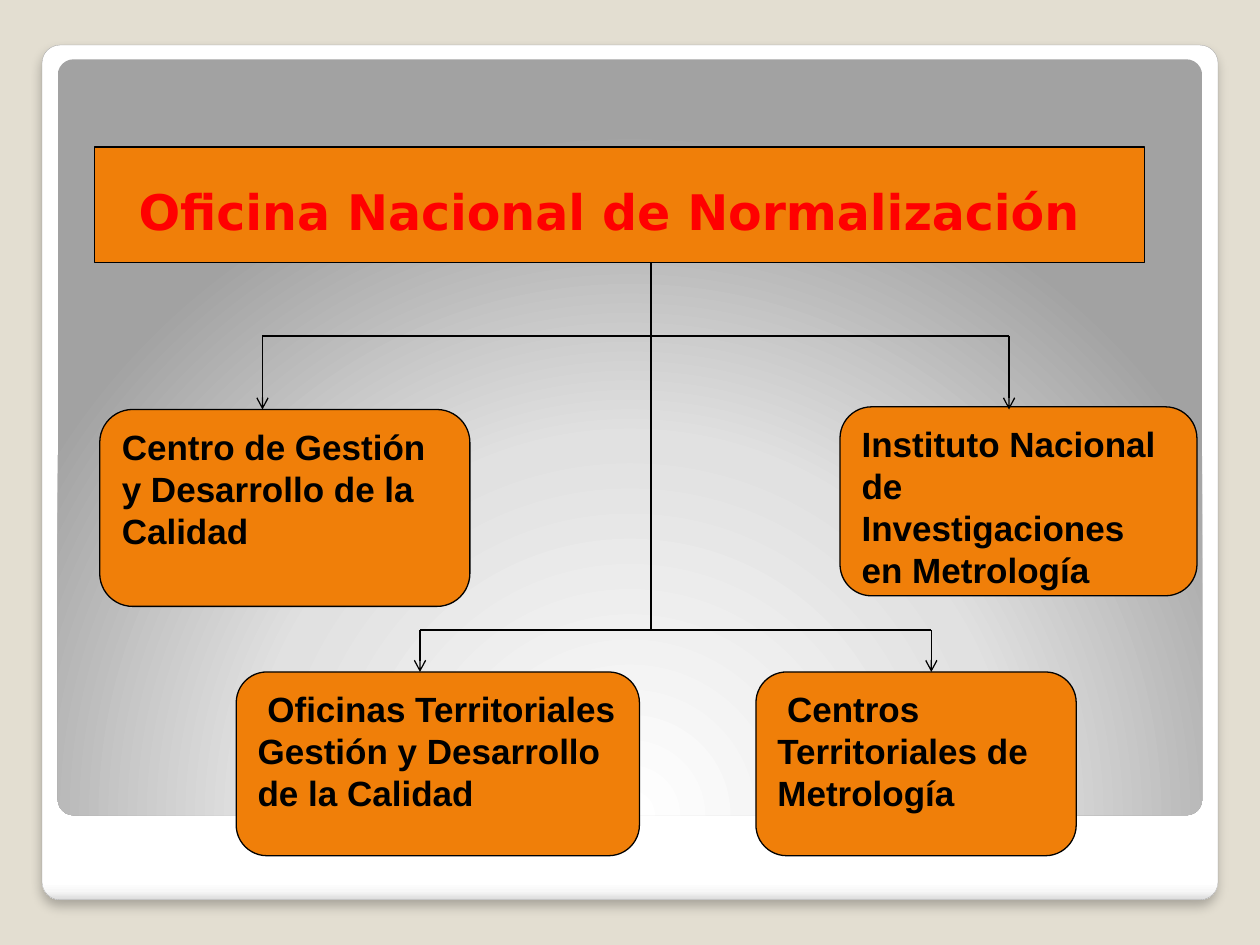
"""Build the organisation chart slide of the Oficina Nacional de Normalización."""
from pptx import Presentation, util as u
from pptx.dml.color import RGBColor
from pptx.enum import shapes, text
from pptx.oxml import parse_xml
from pptx.oxml.ns import nsdecls, qn

COLORS = {"page": "E3DED1", "box": "F07F09", "ink": "000000", "title": "FF0000", "edge": "A4A4A4"}
FRAME_STOPS = [(0, "FFFFFF"), (98, "FFFFFF"), (99, "F7F7F7"), (100, "DADADA")]
PANEL_STOPS = [(0, "FFFFFF"), (55, "E1E1E1"), (100, "A2A2A2")]
DOWN = '<a:lin ang="5400000" scaled="0"/>'
GLOW = ('<a:path path="circle"><a:fillToRect l="50000" t="175000" '
        'r="50000" b="-75000"/></a:path>')

deck = Presentation()
deck.slide_width, deck.slide_height = u.Inches(10), u.Inches(7.5)
CELL = deck.slide_width / 120
page = deck.slides.add_slide(deck.slide_layouts[5])
page.background.fill.solid()
page.background.fill.fore_color.rgb = RGBColor.from_string(COLORS["page"])


def add_box(cells, radius, line, width):
    box = page.shapes.add_shape(shapes.MSO_SHAPE.ROUNDED_RECTANGLE, *[round(n * CELL) for n in cells])
    box.adjustments[0] = radius
    box.shadow.inherit = False
    box.fill.solid()
    box.fill.fore_color.rgb = RGBColor.from_string(COLORS["box"])
    box.line.color.rgb = RGBColor.from_string(COLORS[line])
    box.line.width = u.Pt(width)
    return box


def set_gradient(box, stops, direction):
    marks = "".join(f'<a:gs pos="{share * 1000}"><a:srgbClr val="{color}"/></a:gs>'
                    for share, color in stops)
    solid = box.fill._xPr.find(qn("a:solidFill"))
    box.fill._xPr.replace(solid, parse_xml(
        f'<a:gradFill {nsdecls("a")} rotWithShape="1"><a:gsLst>{marks}</a:gsLst>{direction}</a:gradFill>'))


frame = add_box((4, 4.3, 112, 81.4), 0.021, "edge", 0.16)
set_gradient(frame, FRAME_STOPS, DOWN)
frame._element.spPr.find(qn("a:effectLst")).append(parse_xml(
    f'<a:outerShdw {nsdecls("a")} blurRad="{u.Pt(6)}" dist="{u.Pt(4)}" dir="5400000" algn="t" '
    'rotWithShape="0"><a:srgbClr val="000000"><a:alpha val="25000"/></a:srgbClr></a:outerShdw>'))
panel = add_box((5.5, 5.65, 109, 72), 0.021, "edge", 0.16)
set_gradient(panel, PANEL_STOPS, GLOW)
panel.line.fill.background()

add_box((9, 14, 100, 11), 0, "ink", 0.75)
title = page.shapes.title
title.left, title.top, title.width, title.height = [round(n * CELL) for n in (12, 12, 102, 11.5)]
page.shapes._spTree.append(title._element)
title.text_frame.text = "Oficina Nacional de Normalización"
title.text_frame.word_wrap = True
title.text_frame.vertical_anchor = text.MSO_ANCHOR.BOTTOM
para = title.text_frame.paragraphs[0]
para.alignment = text.PP_ALIGN.LEFT
para.font.name, para.font.size, para.font.bold = "DejaVu Sans", u.Pt(28), True
para.font.color.rgb = RGBColor.from_string(COLORS["title"])

units = [
    ("Centro de Gestión y Desarrollo de la Calidad", (9.5, 39, 35.25, 18.75)),
    ("Instituto Nacional de Investigaciones en Metrología", (80, 38.75, 34, 18)),
    (" Oficinas Territoriales Gestión y Desarrollo de la Calidad", (22.5, 64, 38.4, 17.5)),
    (" Centros Territoriales de Metrología", (72, 64, 30.5, 17.5)),
]
for name, cells in units:
    box = add_box(cells, 0.167, "ink", 0.75)
    box.text_frame.text = name
    box.text_frame.word_wrap = True
    box.text_frame.vertical_anchor = text.MSO_ANCHOR.TOP
    para = box.text_frame.paragraphs[0]
    para.alignment = text.PP_ALIGN.LEFT
    para.font.name, para.font.size, para.font.bold = "Arial", u.Pt(20), True
    para.font.color.rgb = RGBColor.from_string(COLORS["ink"])

links = [(62, 25, 62, 60, False)]
for left, right, bar, tip in [(25, 96.1, 32, 39), (40, 88.7, 60, 64)]:
    links += [(left, bar, right, bar, False), (left, bar, left, tip, True), (right, bar, right, tip, True)]
for *ends, arrow in links:
    link = page.shapes.add_connector(shapes.MSO_CONNECTOR.STRAIGHT, *[round(n * CELL) for n in ends])
    link.line.color.rgb = RGBColor.from_string(COLORS["ink"])
    link.line.width = u.Pt(0.75)
    if arrow:
        link.line._get_or_add_ln().append(parse_xml(f'<a:tailEnd {nsdecls("a")} type="arrow"/>'))
    link._element.spPr.append(parse_xml(f'<a:effectLst {nsdecls("a")}/>'))

deck.save("out.pptx")
